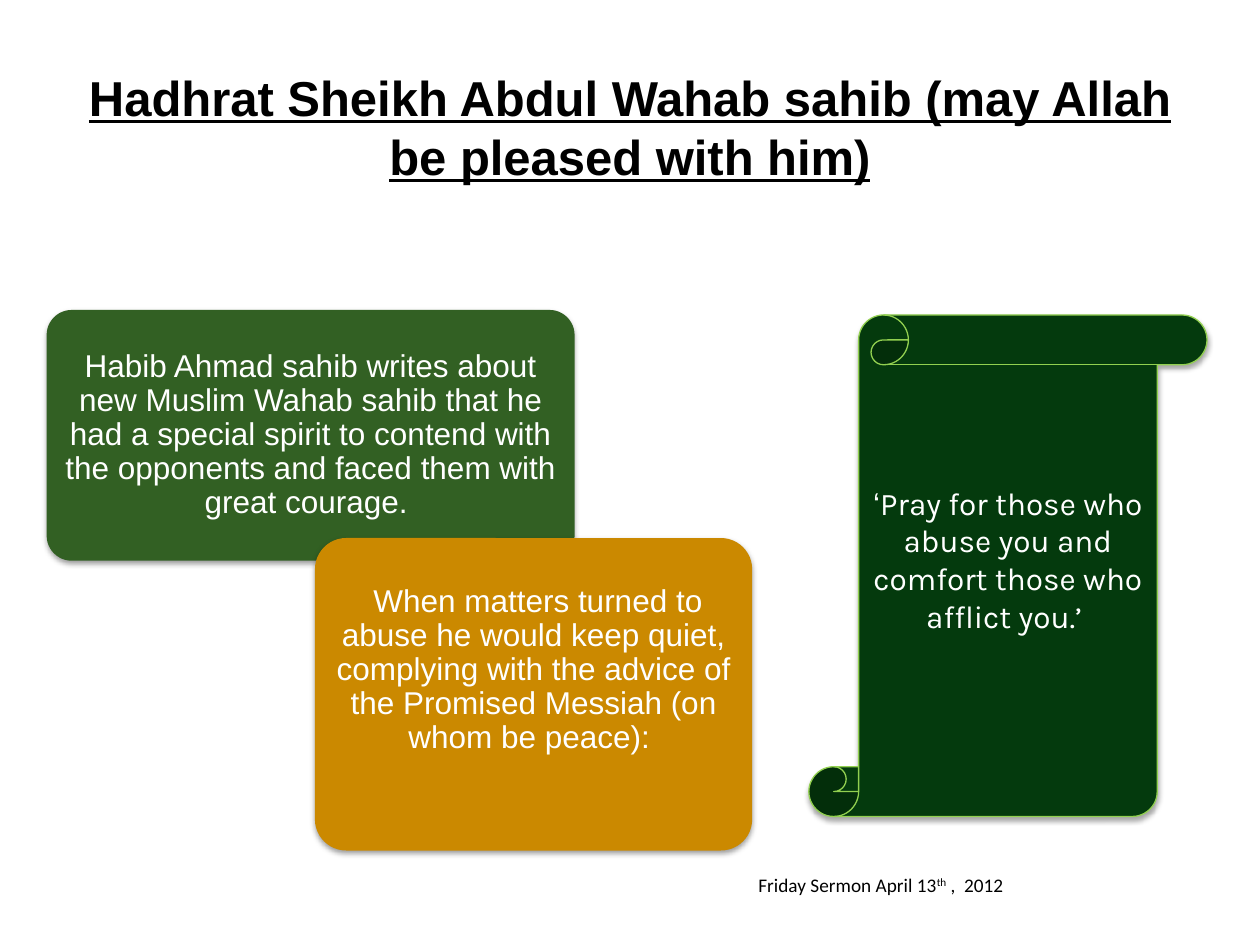
from lxml import etree
from pptx import Presentation
from pptx.dml.color import RGBColor
from pptx.enum.shapes import MSO_SHAPE
from pptx.enum.text import MSO_ANCHOR, MSO_AUTO_SIZE, PP_ALIGN
from pptx.oxml.ns import qn
from pptx.util import Emu, Pt

ROUNDED = MSO_SHAPE.ROUNDED_RECTANGLE
SCROLL = MSO_SHAPE.VERTICAL_SCROLL
MIDDLE = MSO_ANCHOR.MIDDLE
CENTER = PP_ALIGN.CENTER
NO_FIT = MSO_AUTO_SIZE.NONE
GROW = MSO_AUTO_SIZE.SHAPE_TO_FIT_TEXT

BLACK = RGBColor(0x00, 0x00, 0x00)
WHITE = RGBColor(0xFF, 0xFF, 0xFF)
GREEN = RGBColor(0x32, 0x60, 0x23)
AMBER = RGBColor(0xCB, 0x89, 0x00)
DARK_GREEN = RGBColor(0x04, 0x3A, 0x0D)
LIME = RGBColor(0x92, 0xD0, 0x50)

EMU_PER_PX = 9144
TITLE_ONLY = 5


def px(length):
    return Emu(length * EMU_PER_PX)


class SermonSlide:
    """Holds the text style and the slide, and adds each kind of element to it."""

    heading_font = "Arial"
    caption_font = "Calibri"
    body_size = Pt(18)

    def __init__(self, deck):
        self.slide = deck.slides.add_slide(deck.slide_layouts[TITLE_ONLY])

    def format_frame(self, frame, insets, anchor=None, fit=NO_FIT):
        frame.word_wrap = True
        frame.auto_size = fit
        frame.margin_left, frame.margin_top, frame.margin_right, frame.margin_bottom = map(px, insets)
        if anchor is not None:
            frame.vertical_anchor = anchor

    def format_font(self, font, size, color, name=None):
        font.size = size
        font.color.rgb = color
        if name:
            font.name = name

    def title(self, box, wording):
        heading = self.slide.shapes.title
        heading.left, heading.top, heading.width, heading.height = map(px, box)
        self.format_frame(heading.text_frame, (0, 0, 0, 0), MIDDLE)
        heading.text_frame.text = wording
        line = heading.text_frame.paragraphs[0]
        line.alignment = CENTER
        self.format_font(line.font, Pt(28), BLACK, self.heading_font)
        line.font.bold = True
        line.font.underline = True

    def shadow(self, panel, opacity, distance):
        effects = etree.SubElement(panel._element.spPr, qn("a:effectLst"))
        outer = etree.SubElement(
            effects, qn("a:outerShdw"), blurRad=str(Pt(3.1)), dist=str(Pt(distance)),
            dir="5400000", algn="ctr", rotWithShape="0")
        color = etree.SubElement(outer, qn("a:srgbClr"), val=str(BLACK))
        etree.SubElement(color, qn("a:alpha"), val=str(opacity * 1000))

    def panel(self, preset, box, fill, insets, opacity, distance, border=None):
        panel = self.slide.shapes.add_shape(preset, *map(px, box))
        panel.fill.solid()
        panel.fill.fore_color.rgb = fill
        if border is None:
            panel.line.fill.background()
        else:
            panel.line.color.rgb = border
            panel.line.width = Pt(0.75)
        self.shadow(panel, opacity, distance)
        self.format_frame(panel.text_frame, insets, MIDDLE)
        wording = panel.text_frame.paragraphs[0]
        wording.alignment = CENTER
        self.format_font(wording.font, self.body_size, WHITE)
        return panel, wording

    def card(self, box, fill, text, bottom_inset=7):
        card, wording = self.panel(ROUNDED, box, fill, (7, 7, 7, bottom_inset), 38, 1.6)
        card.adjustments[0] = 0.1
        wording.text = text
        wording.line_spacing = 0.9
        wording.font.name = self.heading_font

    def scroll(self, box, pieces):
        _, wording = self.panel(SCROLL, box, DARK_GREEN, (10, 5, 10, 35), 35, 1.8, LIME)
        for text, font_name in pieces:
            piece = wording.add_run()
            piece.text = text
            piece.font.name = font_name

    def caption(self, box, pieces):
        caption = self.slide.shapes.add_textbox(*map(px, box))
        self.format_frame(caption.text_frame, (10, 5, 10, 5), fit=GROW)
        line = caption.text_frame.paragraphs[0]
        self.format_font(line.font, Pt(11), BLACK, self.caption_font)
        for text, raised in pieces:
            piece = line.add_run()
            piece.text = text
            if raised:
                piece._r.get_or_add_rPr().set("baseline", "30000")


def main():
    deck = Presentation()
    deck.slide_width, deck.slide_height = px(1000), px(750)
    sermon = SermonSlide(deck)
    sermon.title((50, 50, 900, 100),
                 "Hadhrat Sheikh Abdul Wahab sahib (may Allah be pleased with him)")
    sermon.card((37, 246, 419, 199), GREEN,
                "Habib Ahmad sahib writes about new Muslim Wahab sahib that he had a special "
                "spirit to contend with the opponents and faced them with great courage. ")
    sermon.card((250, 427, 347, 248), AMBER,
                " When matters turned to abuse he would keep quiet, complying with the advice "
                "of the Promised Messiah (on whom be peace): ", bottom_inset=45)
    sermon.caption((592, 688, 342, 29),
                   [("Friday Sermon April 13", False), ("th", True), (" ,  2012", False)])
    sermon.scroll((642, 250, 316, 398),
                  [("‘", "Arial"),
                   ("Pray for those who abuse you and comfort those who afflict you.’ ", "Karla")])
    deck.save("out.pptx")


if __name__ == "__main__":
    main()
